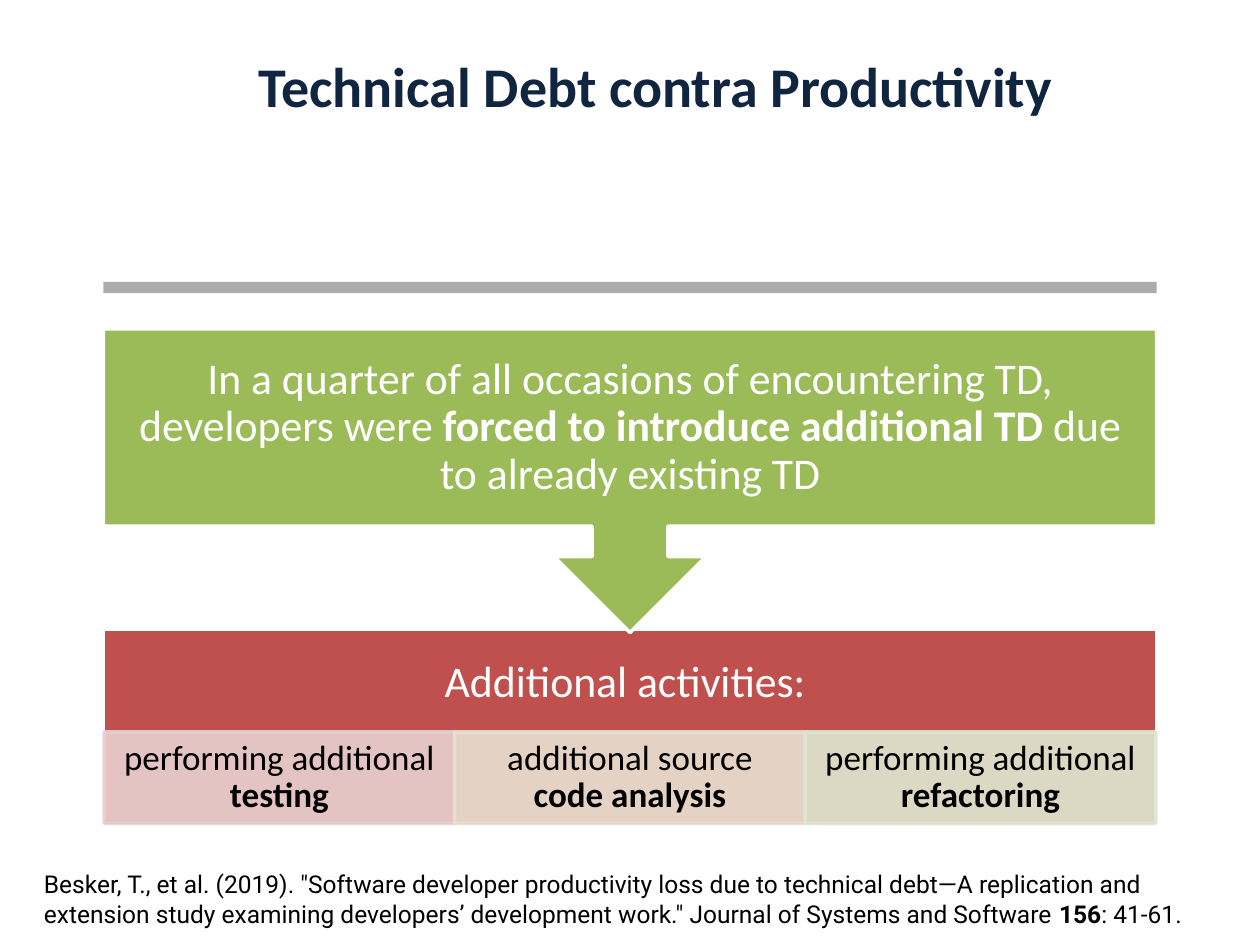
from pptx import Presentation
from pptx.dml.color import RGBColor
from pptx.enum.shapes import MSO_SHAPE
from pptx.enum.text import MSO_ANCHOR, PP_ALIGN
from pptx.oxml.ns import qn
from pptx.util import Pt
from lxml.etree import SubElement

LEFT, WIDE = 59.04, 601.92
CELL_LEFT, CELL_WIDE = 59.5, 200.33
CELLS = [
    ("performing additional ", "testing", "E8D0D0"),
    ("additional source ", "code analysis", "E8E1D1"),
    ("performing additional ", "refactoring", "DEE7D1"),
]


def paint(fill, color, alpha=100):
    fill.solid()
    fill.fore_color.rgb = RGBColor.from_string(color)
    if alpha < 100:
        tone = fill._xPr.find(qn("a:solidFill"))[0]
        SubElement(tone, qn("a:alpha"), val=str(alpha * 1000))


def add_box(slide, kind, place, color, line=None, alpha=100):
    box = slide.shapes.add_shape(kind, *map(Pt, place))
    box.shadow.inherit = False
    paint(box.fill, color, alpha)
    if line:
        box.line.width = Pt(2)
        paint(box.line.fill, line, alpha)
    else:
        box.line.fill.background()
    return box


def add_text(slide, place):
    box = slide.shapes.add_textbox(*map(Pt, place))
    box.text_frame.word_wrap = True
    return box


def set_text(shape, parts, size, color, font="Calibri"):
    para = shape.text_frame.paragraphs[0]
    for words, bold in parts:
        run = para.add_run()
        run.text = words
        run.font.name = font
        run.font.size = Pt(size)
        run.font.bold = bold
        run.font.color.rgb = RGBColor.from_string(color)
    return para


def center(shape, para, side, top, base):
    frame = shape.text_frame
    frame.word_wrap = True
    frame.vertical_anchor = MSO_ANCHOR.MIDDLE
    frame.margin_left = frame.margin_right = Pt(side)
    frame.margin_top, frame.margin_bottom = Pt(top), Pt(base)
    para.alignment = PP_ALIGN.CENTER
    para.line_spacing = 0.9


def add_title(slide):
    title = slide.shapes.title
    title.left, title.top, title.width, title.height = map(
        Pt, (140.4, 25.92, 472.32, 46.08))
    para = set_text(title, [("Technical Debt contra Productivity", True)],
                    32, "10253F")
    para.alignment = PP_ALIGN.LEFT
    title.text_frame.word_wrap = False
    title.text_frame.vertical_anchor = MSO_ANCHOR.TOP


def add_tasks(slide):
    base = add_box(slide, MSO_SHAPE.RECTANGLE, (LEFT, 359.7, WIDE, 112.3),
                   "C0504D", "FFFFFF")
    para = set_text(base, [("Additional activities: ", False)], 25, "FFFFFF")
    center(base, para, 13.68, 13.68, 64.5)
    for col, (lead, key, color) in enumerate(CELLS):
        place = (CELL_LEFT + col * CELL_WIDE, 418.32, CELL_WIDE, 52.2)
        cell = add_box(slide, MSO_SHAPE.RECTANGLE, place, color, color, 90)
        para = set_text(cell, [(lead, False), (key, True)], 20, "000000")
        center(cell, para, 9, 2.16, 2.16)


def add_cause(slide):
    arrow = add_box(slide, MSO_SHAPE.UP_ARROW_CALLOUT,
                    (LEFT, 187.92, WIDE, 173.52), "9BBB59", "FFFFFF")
    arrow.rotation = 180
    label = add_text(slide, (LEFT, 187.92, WIDE, 113.04))
    para = set_text(label, [
        ("In a quarter of all occasions of encountering TD, "
         "developers were ", False),
        ("forced to introduce additional TD ", True),
        ("due to already existing TD", False),
    ], 25, "FFFFFF")
    center(label, para, 13.68, 13.68, 13.68)


def add_cite(slide):
    cite = add_text(slide, (18, 493.2, 693.36, 41.04))
    set_text(cite, [
        ('Besker, T., et al. (2019). "Software developer productivity loss '
         "due to technical debt—A replication and extension study examining "
         'developers’ development work." Journal of Systems and Software ',
         False),
        ("156", True),
        (": 41-61.", False),
    ], 14, "000000", "Roboto")


def main():
    deck = Presentation()
    deck.slide_width, deck.slide_height = Pt(720), Pt(540)
    slide = deck.slides.add_slide(deck.slide_layouts[5])
    add_box(slide, MSO_SHAPE.RECTANGLE, (LEFT, 161, WIDE, 6.48),
            "808080", alpha=65)
    add_tasks(slide)
    add_cause(slide)
    add_title(slide)
    add_cite(slide)
    deck.save("out.pptx")


if __name__ == "__main__":
    main()
